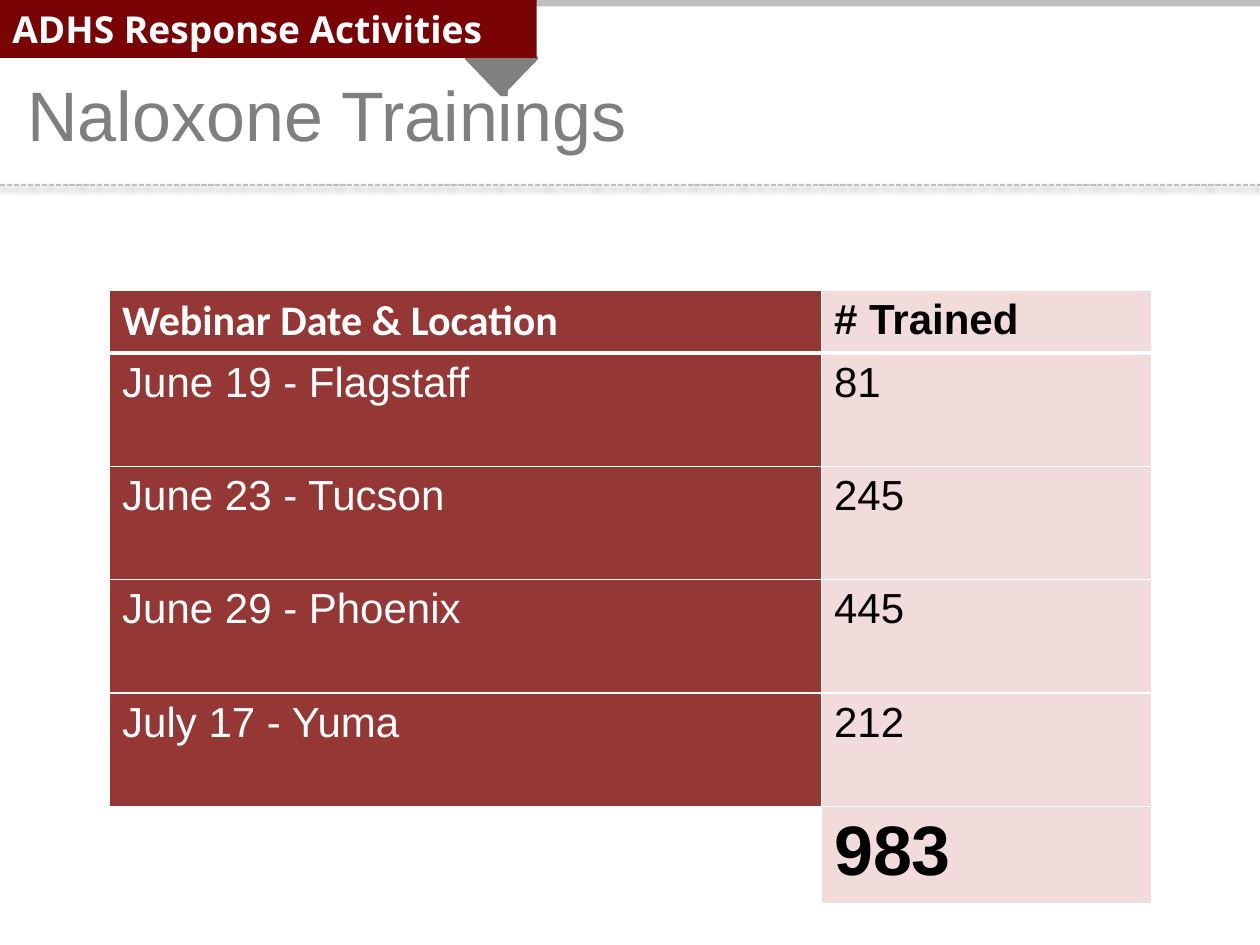
import pptx
import pptx.dml.color
import pptx.enum.dml
import pptx.enum.shapes
import pptx.enum.text
import pptx.oxml
import pptx.oxml.ns
import pptx.util
from lxml import etree

WIDTH, HEIGHT = 10, 7.5
BANNER_W, BANNER_H = 4.26, 0.46
WHITE, BLACK = "FFFFFF", "000000"
BANNER_RED, GREY, LIGHT_GREY, TITLE_GREY = "7A0306", "808080", "BFBFBF", "7F7F7F"
PLACE_RED, COUNT_PINK = "953735", "F2DCDB"

COLUMN_WIDTHS = [5.65, 2.62]
ROW_HEIGHTS = [0.5] + [0.9] * 4 + [0.77]
TRAININGS = [
    ("Webinar Date & Location", "# Trained"),
    ("June 19 - Flagstaff", "81"),
    ("June 23 - Tucson", "245"),
    ("June 29 - Phoenix", "445"),
    ("July 17 - Yuma", "212"),
    ("", "983"),
]

inches = pptx.util.Inches


def rgb(hex_color):
    return pptx.dml.color.RGBColor.from_string(hex_color)


def fill_with(target, color):
    target.fill.solid()
    target.fill.fore_color.rgb = rgb(color)


def write(frame, text, size, color, font="Arial", bold=False):
    frame.text = text
    for run in frame.paragraphs[0].runs:
        run.font.size = pptx.util.Pt(size)
        run.font.name = font
        run.font.bold = bold
        run.font.color.rgb = rgb(color)


def add_block(slide, kind, left, top, width, height, color):
    block = slide.shapes.add_shape(
        kind, inches(left), inches(top), inches(width), inches(height))
    block.shadow.inherit = False
    fill_with(block, color)
    block.line.fill.background()
    return block


def add_divider(slide, top):
    divider = slide.shapes.add_connector(
        pptx.enum.shapes.MSO_CONNECTOR.STRAIGHT,
        0, inches(top), inches(WIDTH), inches(top))
    divider.line.color.rgb = rgb(LIGHT_GREY)
    divider.line.width = pptx.util.Pt(1)
    divider.line.dash_style = pptx.enum.dml.MSO_LINE.SQUARE_DOT
    # Soft shadow straight below the line
    divider._element.spPr.append(pptx.oxml.parse_xml(
        f'<a:effectLst {pptx.oxml.ns.nsdecls("a")}>'
        f'<a:outerShdw blurRad="{pptx.util.Pt(3.1)}" dist="{pptx.util.Pt(1.6)}"'
        ' dir="5400000" rotWithShape="0"><a:srgbClr val="000000">'
        '<a:alpha val="38000"/></a:srgbClr></a:outerShdw></a:effectLst>'))


def add_borders(cell, widths):
    properties = cell._tc.get_or_add_tcPr()
    for side, width in widths.items():
        border = etree.SubElement(properties, pptx.oxml.ns.qn(f"a:ln{side}"),
                                  w=str(pptx.util.Pt(width)))
        paint = etree.SubElement(border, pptx.oxml.ns.qn("a:solidFill"))
        etree.SubElement(paint, pptx.oxml.ns.qn("a:srgbClr"), val=WHITE)


def add_trainings_table(slide, left, top):
    table = slide.shapes.add_table(
        len(TRAININGS), len(COLUMN_WIDTHS), inches(left), inches(top),
        inches(sum(COLUMN_WIDTHS)), inches(sum(ROW_HEIGHTS))).table
    for column, width in zip(table.columns, COLUMN_WIDTHS):
        column.width = inches(width)
    for row, height in zip(table.rows, ROW_HEIGHTS):
        row.height = inches(height)

    total_row = len(TRAININGS) - 1
    for r, training in enumerate(TRAININGS):
        header, total = r == 0, r == total_row
        for c, text in enumerate(training):
            cell = table.cell(r, c)
            place = c == 0
            # The header is set off by a thick rule below it
            add_borders(cell, {"L": 1, "R": 1, "T": 3 if r == 1 else 1,
                               "B": 3 if header else 1})
            if place:
                fill_with(cell, WHITE if total else PLACE_RED)
            else:
                fill_with(cell, COUNT_PINK)
            write(cell.text_frame, text, 40 if total else 24,
                  WHITE if place else BLACK,
                  "Calibri" if header and place else "Arial", header or total)


def add_banner(slide):
    shapes = pptx.enum.shapes.MSO_SHAPE
    pointer = add_block(slide, shapes.ISOSCELES_TRIANGLE,
                        3.7, BANNER_H, 0.56, 0.29, GREY)
    pointer.rotation = 180
    pointer.line.color.rgb = rgb(GREY)
    pointer.line.width = pptx.util.Pt(2)
    add_block(slide, shapes.RECTANGLE, 3.68, 0, WIDTH - 3.68, 0.05, LIGHT_GREY)
    banner = add_block(slide, shapes.RECTANGLE, 0, 0, BANNER_W, BANNER_H, BANNER_RED)
    write(banner.text_frame, "ADHS Response Activities", 21.2, WHITE, "Open Sans", True)
    banner.text_frame.paragraphs[0].alignment = pptx.enum.text.PP_ALIGN.LEFT


def add_title(slide):
    title = slide.shapes.add_textbox(
        inches(0.12), inches(0.52), inches(9.75), inches(0.77)).text_frame
    title.word_wrap = True
    write(title, "Naloxone Trainings", 40, TITLE_GREY)


def main():
    deck = pptx.Presentation()
    deck.slide_width, deck.slide_height = inches(WIDTH), inches(HEIGHT)
    slide = deck.slides.add_slide(deck.slide_layouts[6])

    # Heading area
    add_banner(slide)
    add_divider(slide, 1.47)
    add_title(slide)

    # People trained per webinar
    add_trainings_table(slide, 0.87, 2.3)

    deck.save("out.pptx")


if __name__ == "__main__":
    main()
